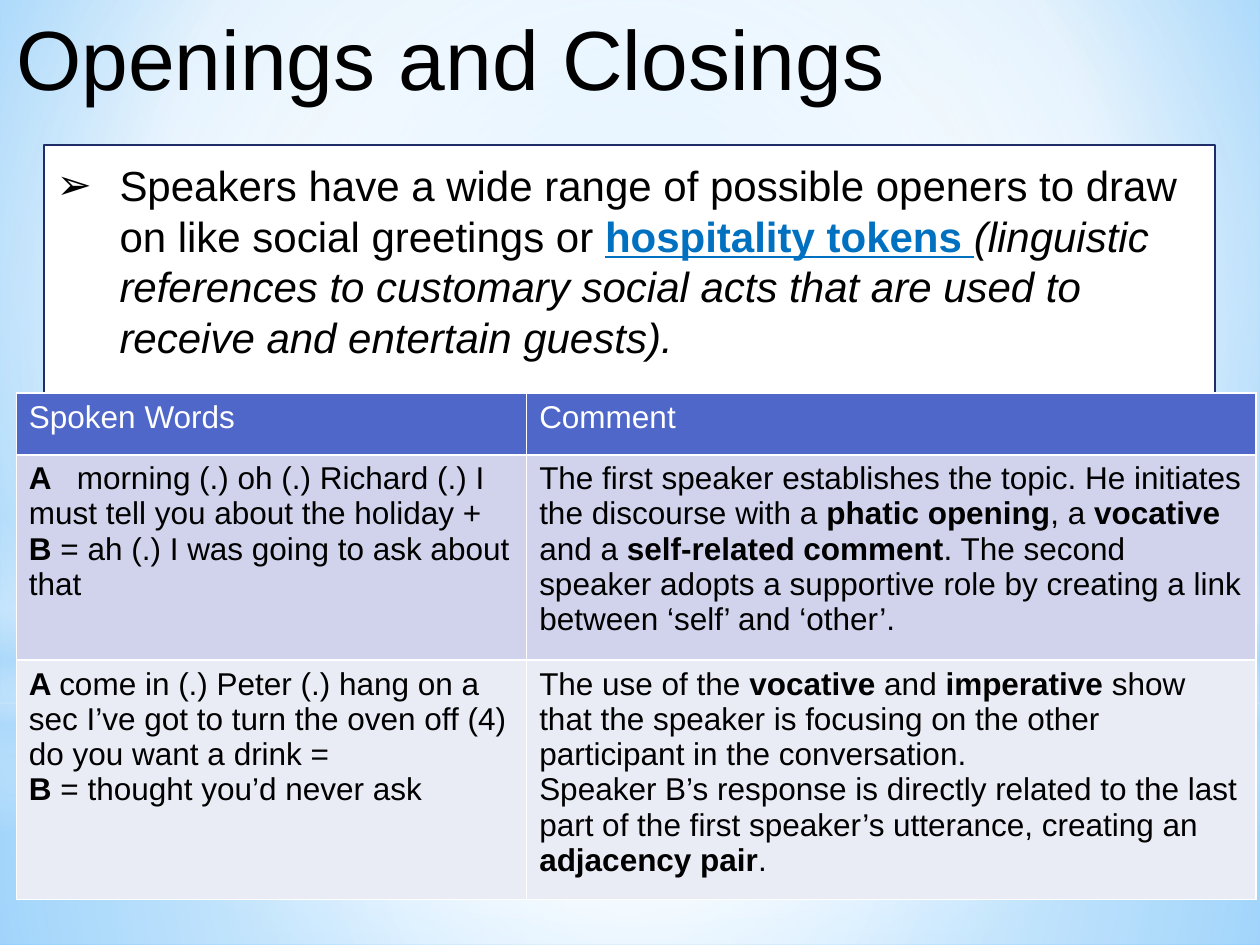
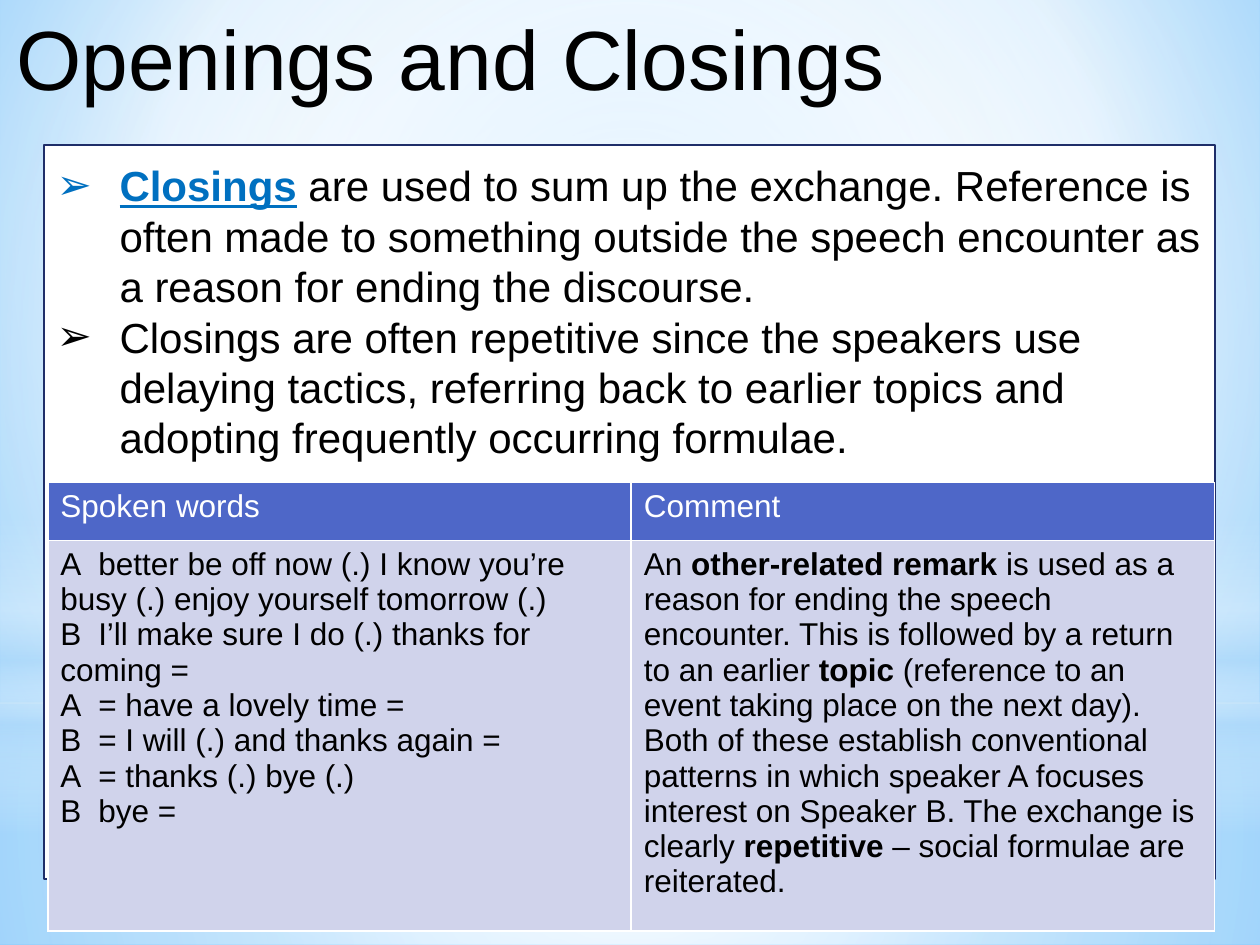
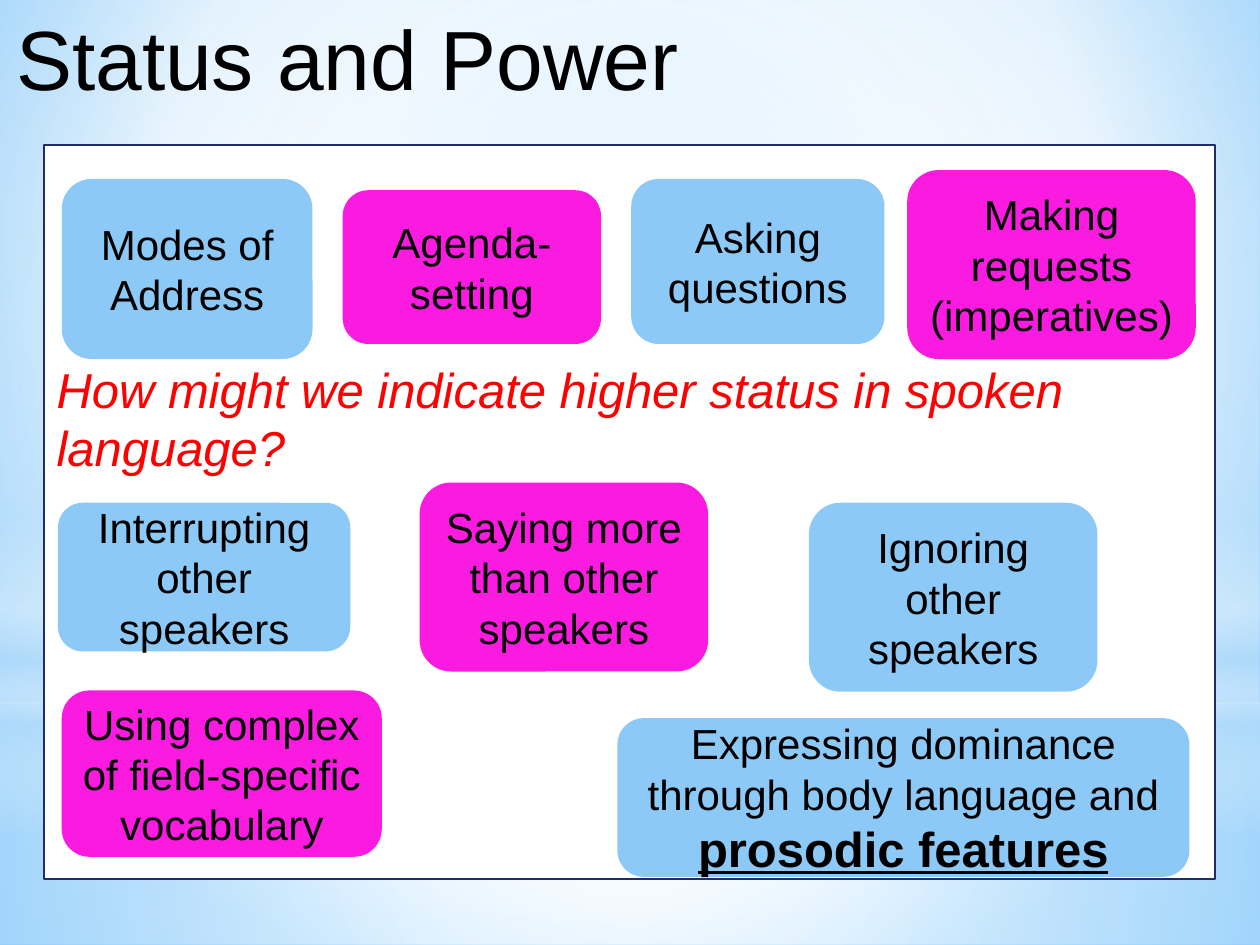
from lxml.etree import SubElement
from pptx import Presentation
from pptx.dml.color import RGBColor
from pptx.enum.shapes import MSO_SHAPE
from pptx.enum.text import MSO_ANCHOR, PP_ALIGN
from pptx.oxml.ns import qn
from pptx.util import Inches, Pt

COLORS = {
    "black": "000000", "white": "FFFFFF", "red": "FF0000", "term": "0070C0",
    "panel line": "1F2E69", "sky": "8CC9F7", "pink": "FB1BE0",
    "header": "4E67C8", "odd row": "D0D3EB", "even row": "E9EBF5",
    "haze": "B4DCFA", "pale sky": "9ED5FF", "deep sky": "5BB9FF",
}
BOLD = {"bold": True}
ITALIC = {"italic": True}
TERM = {"bold": True, "underline": True, "color": "term"}
CENTER = (50, 50, 50, 50)

BACKDROP = [(0, "pale sky", 100), (60, "white", 100), (100, "deep sky", 100)]
# shape, place, gradient stops (position, color, opacity), gradient focus
GLOWS = [
    (MSO_SHAPE.RECTANGLE, (0, 5.58, 10, 1.92),
     [(0, "white", 91), (37, "white", 76), (100, "haze", 79)], CENTER),
    (MSO_SHAPE.RECTANGLE, (0, 0, 10, 5.58),
     [(0, "white", 89), (48, "white", 62), (100, "haze", 79)], CENTER),
    (MSO_SHAPE.RECTANGLE, (0, 4.12, 10, 2.5),
     [(0, "white", 0), (29, "white", 30), (45, "haze", 40),
      (55, "white", 26), (65, "haze", 60), (100, "white", 0)], None),
    (MSO_SHAPE.OVAL, (0, 1.75, 10, 5.58),
     [(0, "white", 100), (56, "white", 0)], CENTER),
]


def rgb(name):
    return RGBColor.from_string(COLORS[name])


def set_gradient(element, stops, focus=None):
    """Refill the first gradient in element: round with a focus, else vertical."""
    gradient = element.find(".//" + qn("a:gradFill"))
    for child in list(gradient):
        gradient.remove(child)
    stop_list = SubElement(gradient, qn("a:gsLst"))
    for position, color, opacity in stops:
        stop = SubElement(stop_list, qn("a:gs"), pos=str(position * 1000))
        tint = SubElement(stop, qn("a:srgbClr"), val=COLORS[color])
        if opacity < 100:
            SubElement(tint, qn("a:alpha"), val=str(opacity * 1000))
    if focus:
        circle = SubElement(gradient, qn("a:path"), path="circle")
        sides = {side: str(value * 1000) for side, value in zip("ltrb", focus)}
        SubElement(circle, qn("a:fillToRect"), sides)
    else:
        SubElement(gradient, qn("a:lin"), ang="5400000", scaled="0")


def set_borders(cell):
    properties = cell._tc.get_or_add_tcPr()
    for side in "LRTB":
        line = SubElement(properties, qn("a:ln" + side), w=str(Pt(1)))
        fill = SubElement(line, qn("a:solidFill"))
        SubElement(fill, qn("a:srgbClr"), val=COLORS["white"])


def write(frame, paragraphs, size=24, color="black", align=PP_ALIGN.LEFT,
          italic=False, bullet=None, tab=None):
    """Each paragraph is a string, or a list of strings and (string, format) pairs."""
    frame.word_wrap = True
    for index, content in enumerate(paragraphs):
        paragraph = frame.add_paragraph() if index else frame.paragraphs[0]
        paragraph.alignment = align
        properties = paragraph._p.get_or_add_pPr()
        if bullet:
            properties.set("marL", str(Inches(0.5)))
            properties.set("indent", str(-Inches(0.5)))
            SubElement(properties, qn("a:buFont"), typeface="Arial")
            SubElement(properties, qn("a:buChar"), char=bullet)
        if tab:
            tabs = SubElement(properties, qn("a:tabLst"))
            SubElement(tabs, qn("a:tab"), pos=str(Inches(tab)), algn="l")
        for part in [content] if isinstance(content, str) else content:
            text, style = (part, {}) if isinstance(part, str) else part
            run = paragraph.add_run()
            run.text = text
            run.font.name = "Arial"
            run.font.size = Pt(style.get("size", size))
            run.font.color.rgb = rgb(style.get("color", color))
            run.font.bold = style.get("bold", False)
            run.font.italic = style.get("italic", italic)
            run.font.underline = style.get("underline", False)


class Deck:
    def __init__(self):
        self.presentation = Presentation()
        self.presentation.slide_width = Inches(10)
        self.presentation.slide_height = Inches(7.5)
        self.slide = None

    def add_slide(self, title, title_width=9.97):
        layout = self.presentation.slide_layouts[6]
        self.slide = self.presentation.slides.add_slide(layout)
        self.slide.background.fill.gradient()
        set_gradient(self.slide.element, BACKDROP, (20, 10, 20, 60))
        for kind, place, stops, focus in GLOWS:
            glow = self.add_shape(kind, place)
            glow.fill.gradient()
            set_gradient(glow.element, stops, focus)
        box = self.slide.shapes.add_textbox(
            *map(Inches, (0.03, 0, title_width, 0.91)))
        write(box.text_frame, [title], size=48)

    def add_shape(self, kind, place, fill=None):
        shape = self.slide.shapes.add_shape(kind, *map(Inches, place))
        shape.shadow.inherit = False
        shape.line.fill.background()
        if fill:
            shape.fill.solid()
            shape.fill.fore_color.rgb = rgb(fill)
        return shape

    def add_panel(self, paragraphs, top_margin=0.12, **text_format):
        panel = self.add_shape(MSO_SHAPE.RECTANGLE, (0.35, 1.15, 9.29, 5.83), "white")
        panel.line.color.rgb = rgb("panel line")
        panel.line.width = Pt(1.25)
        panel.text_frame.vertical_anchor = MSO_ANCHOR.TOP
        panel.text_frame.margin_top = Inches(top_margin)
        write(panel.text_frame, paragraphs, **text_format)

    def add_card(self, content, place, fill):
        card = self.add_shape(MSO_SHAPE.ROUNDED_RECTANGLE, place, fill)
        card.text_frame.vertical_anchor = MSO_ANCHOR.MIDDLE
        write(card.text_frame, [content], align=PP_ALIGN.CENTER)

    def add_table(self, left, top, widths, heights, rows, tab):
        table = self.slide.shapes.add_table(
            len(rows), len(widths), Inches(left), Inches(top),
            Inches(sum(widths)), Inches(sum(heights))).table
        for column, width in zip(table.columns, widths):
            column.width = Inches(width)
        for row_index, (height, row) in enumerate(zip(heights, rows)):
            table.rows[row_index].height = Inches(height)
            is_header = row_index == 0
            fill = "header" if is_header else ("even row", "odd row")[row_index % 2]
            for column_index, paragraphs in enumerate(row):
                cell = table.cell(row_index, column_index)
                set_borders(cell)
                cell.fill.solid()
                cell.fill.fore_color.rgb = rgb(fill)
                write(cell.text_frame, paragraphs, size=18,
                      color="white" if is_header else "black",
                      tab=tab if column_index == 0 and not is_header else None)


def add_openings(deck):
    deck.add_slide("Openings and Closings")
    deck.add_panel([[
        "Speakers have a wide range of possible openers to draw on like social "
        "greetings or ",
        ("hospitality tokens ", TERM),
        ("(linguistic references to customary social acts that are used to receive "
         "and entertain guests).", ITALIC),
    ]], bullet="➢")
    deck.add_table(0.13, 3.12, [4.05, 5.79], [0.49, 1.63, 1.9], [
        [["Spoken Words"], ["Comment"]],
        [
            [[("A", BOLD), "\tmorning (.) oh (.) Richard (.) I must tell you about "
              "the holiday +"],
             [("B", BOLD), " = ah (.) I was going to ask about that"]],
            [["The first speaker establishes the topic. He initiates the discourse "
              "with a ", ("phatic opening", BOLD), ", a ", ("vocative", BOLD),
              " and a ", ("self-related comment", BOLD),
              ". The second speaker adopts a supportive role by creating a link "
              "between ‘self’ and ‘other’."]],
        ],
        [
            [[("A ", BOLD), "come in (.) Peter (.) hang on a sec I’ve got to turn "
              "the oven off (4) do you want a drink ="],
             [("B", BOLD), " = thought you’d never ask"]],
            [["The use of the ", ("vocative", BOLD), " and ", ("imperative", BOLD),
              " show that the speaker is focusing on the other participant in the "
              "conversation."],
             ["Speaker B’s response is directly related to the last part of the "
              "first speaker’s utterance, creating an ",
              ("adjacency pair", BOLD), "."]],
        ],
    ], tab=0.38)


def add_closings(deck):
    deck.add_slide("Openings and Closings")
    deck.add_panel([
        [("Closings", TERM),
         " are used to sum up the exchange. Reference is often made to something "
         "outside the speech encounter as a reason for ending the discourse."],
        "Closings are often repetitive since the speakers use delaying tactics, "
        "referring back to earlier topics and adopting frequently occurring formulae.",
    ], bullet="➢")
    deck.add_table(0.38, 3.83, [4.63, 4.63], [0.46, 3.1], [
        [["Spoken words"], ["Comment"]],
        [
            ["A\tbetter be off now (.) I know you’re busy (.) enjoy yourself "
             "tomorrow (.)",
             "B\tI’ll make sure I do (.) thanks for coming =",
             "A\t= have a lovely time =",
             "B\t= I will (.) and thanks again =",
             "A\t= thanks (.) bye (.)",
             "B\tbye ="],
            [["An ", ("other-related remark ", BOLD),
              "is used as a reason for ending the speech encounter. This is followed "
              "by a return to an earlier ", ("topic", BOLD),
              " (reference to an event taking place on the next day). Both of these "
              "establish conventional patterns in which speaker A focuses interest "
              "on Speaker B. The exchange is clearly ", ("repetitive", BOLD),
              " – social formulae are reiterated."]],
        ],
    ], tab=0.3)


def add_status(deck):
    deck.add_slide("Status and Power", title_width=9.33)
    deck.add_panel(["How might we indicate higher status in spoken language?"],
                   top_margin=1.7, size=28, color="red", italic=True)
    dominance = ["Expressing dominance through body language and ",
                 ("prosodic features", {"size": 28, "bold": True, "underline": True})]
    for content, place, fill in [
        ("Modes of Address", (0.49, 1.42, 1.99, 1.43), "sky"),
        ("Agenda- setting", (2.72, 1.51, 2.05, 1.22), "pink"),
        ("Making requests (imperatives)", (7.2, 1.35, 2.29, 1.5), "pink"),
        ("Asking questions", (5.01, 1.42, 2.01, 1.31), "sky"),
        ("Interrupting other speakers", (0.46, 3.99, 2.32, 1.18), "sky"),
        ("Saying more than other speakers", (3.33, 3.83, 2.29, 1.5), "pink"),
        ("Ignoring other speakers", (6.42, 3.99, 2.29, 1.5), "sky"),
        ("Using complex of field-specific vocabulary",
         (0.49, 5.48, 2.54, 1.32), "pink"),
        (dominance, (4.9, 5.7, 4.54, 1.26), "sky"),
    ]:
        deck.add_card(content, place, fill)


def main():
    deck = Deck()
    add_openings(deck)
    add_closings(deck)
    add_status(deck)
    deck.presentation.save("out.pptx")


if __name__ == "__main__":
    main()
